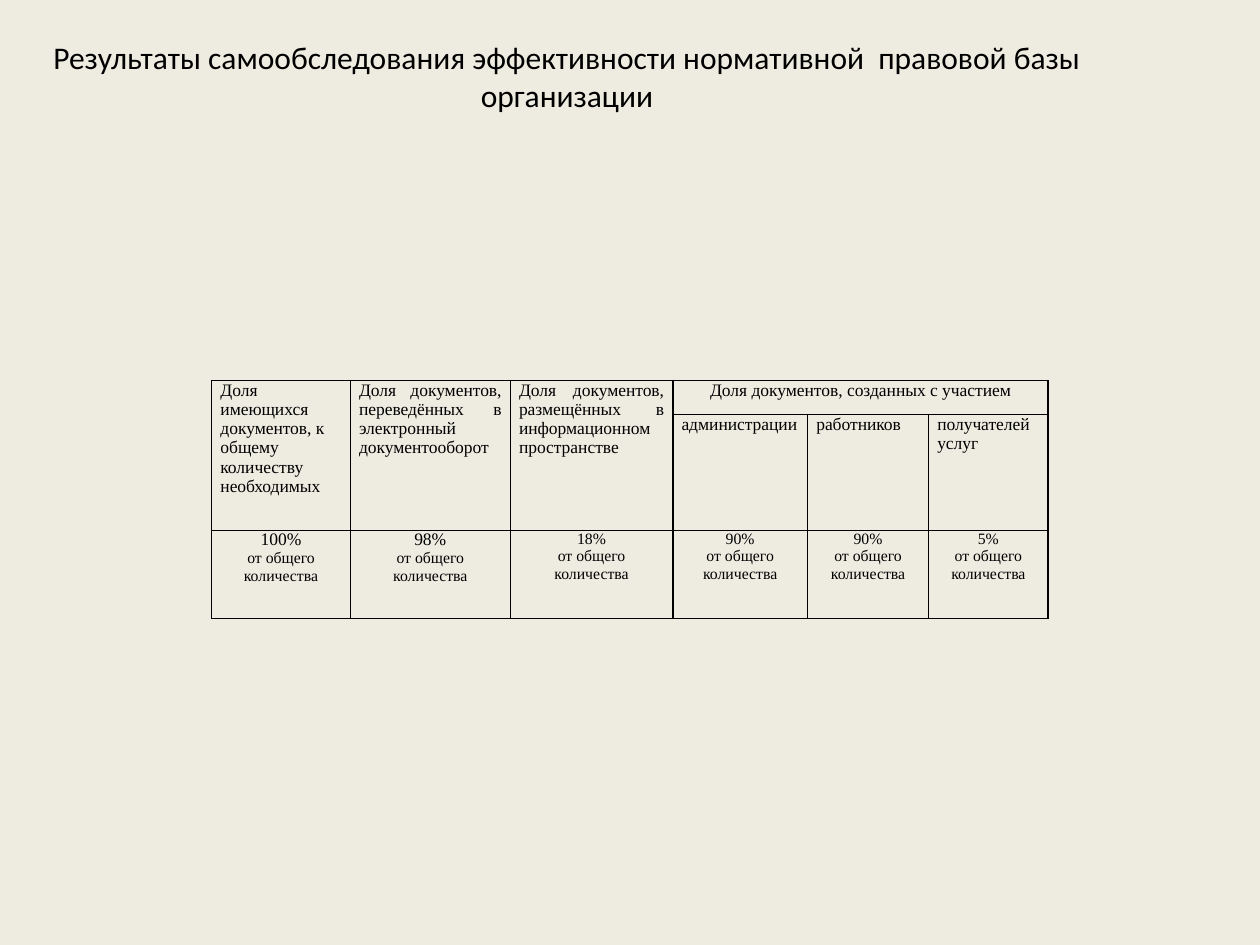
from dataclasses import dataclass

from lxml import etree
from pptx import Presentation
from pptx import util as u
from pptx.dml.color import RGBColor
from pptx.enum import text
from pptx.oxml.ns import qn

COLORS = {"background": "EEECE1", "ink": "000000"}
COLUMN_WIDTHS = [1.1, 1.27, 1.29, 1.07, 0.96, 0.95]
ROW_HEIGHTS = [0.27, 0.92, 0.7]
LEFT, CENTER, JUSTIFY = text.PP_ALIGN.LEFT, text.PP_ALIGN.CENTER, text.PP_ALIGN.JUSTIFY


@dataclass
class Heading:
    row: int
    column: int
    words: str
    align: text.PP_ALIGN = JUSTIFY
    rows: int = 1
    columns: int = 1


@dataclass
class Share:
    percent: str
    size: int = 9


HEADINGS = [
    Heading(0, 0, "Доля имеющихся документов, к общему количеству необходимых", LEFT, rows=2),
    Heading(0, 1, "Доля документов, переведённых в электронный документооборот", rows=2),
    Heading(0, 2, "Доля документов, размещённых в информационном пространстве", rows=2),
    Heading(0, 3, "Доля документов, созданных с участием", CENTER, columns=3),
    Heading(1, 3, "администрации"),
    Heading(1, 4, "работников"),
    Heading(1, 5, "получателей услуг"),
]
SHARES = [Share("100%", 10), Share("98%", 10), Share("18%"), Share("90%"), Share("90%"), Share("5%")]


def format_para(para, font: str, size: int, align: text.PP_ALIGN) -> None:
    para.alignment = align
    for span in para.runs:
        span.font.name = font
        span.font.size = u.Pt(size)
        span.font.bold = False
        span.font.color.rgb = RGBColor.from_string(COLORS["ink"])


def style_cell(cell) -> None:
    cell.margin_left = cell.margin_right = u.Inches(0.07)
    cell.margin_top = cell.margin_bottom = 0
    properties = cell._tc.get_or_add_tcPr()
    for side in ("lnL", "lnR", "lnT", "lnB"):
        line = etree.SubElement(properties, qn(f"a:{side}"), w=str(u.Pt(1)))
        fill = etree.SubElement(line, qn("a:solidFill"))
        etree.SubElement(fill, qn("a:srgbClr"), val=COLORS["ink"])
    cell.fill.background()


def fill_cell(cell, lines: list[str], sizes: list[int], align: text.PP_ALIGN) -> None:
    cell.text_frame.text = "\n".join(lines)
    for para, size in zip(cell.text_frame.paragraphs, sizes):
        format_para(para, "Times New Roman", size, align)


def add_title(page) -> None:
    title = page.shapes.title
    title.left, title.top = u.Inches(0), u.Inches(0.3)
    title.width, title.height = u.Inches(9), u.Inches(1.25)
    frame = title.text_frame
    frame.text = "Результаты самообследования эффективности нормативной  правовой базы организации"
    frame.word_wrap = True
    frame.auto_size = text.MSO_AUTO_SIZE.NONE
    frame.vertical_anchor = text.MSO_ANCHOR.TOP
    frame.margin_top = 0
    format_para(frame.paragraphs[0], "Calibri", 18, CENTER)


def add_shares_table(page) -> None:
    table = page.shapes.add_table(
        len(ROW_HEIGHTS), len(COLUMN_WIDTHS), u.Inches(1.68), u.Inches(3.02),
        u.Inches(sum(COLUMN_WIDTHS)), u.Inches(sum(ROW_HEIGHTS)),
    ).table
    table.first_row = table.horz_banding = False
    for column, width in zip(table.columns, COLUMN_WIDTHS):
        column.width = u.Inches(width)
    for row, height in zip(table.rows, ROW_HEIGHTS):
        row.height = u.Inches(height)
    for cell in table.iter_cells():
        style_cell(cell)
    for heading in HEADINGS:
        cell = table.cell(heading.row, heading.column)
        if heading.rows > 1 or heading.columns > 1:
            cell.merge(table.cell(heading.row + heading.rows - 1, heading.column + heading.columns - 1))
        fill_cell(cell, [heading.words], [10], heading.align)
    for column, share in enumerate(SHARES):
        fill_cell(table.cell(2, column), [share.percent, "от общего количества"], [share.size, 9], CENTER)


def main() -> None:
    deck = Presentation()
    deck.slide_width, deck.slide_height = u.Inches(10), u.Inches(7.5)
    page = deck.slides.add_slide(deck.slide_layouts[5])
    page.background.fill.solid()
    page.background.fill.fore_color.rgb = RGBColor.from_string(COLORS["background"])
    add_title(page)
    add_shares_table(page)
    deck.save("out.pptx")


if __name__ == "__main__":
    main()
